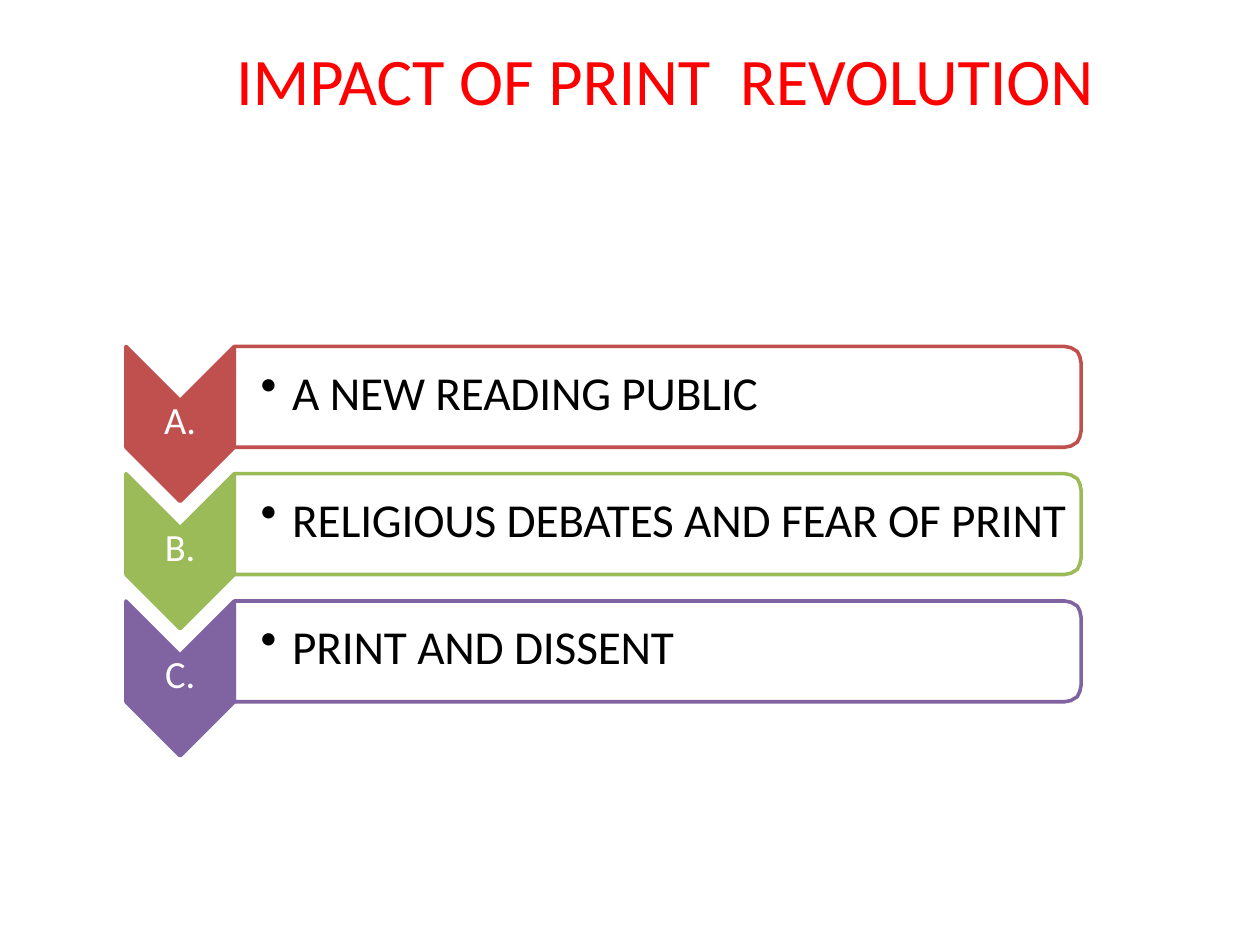
from lxml.etree import SubElement
from pptx import Presentation
from pptx.dml.color import RGBColor
from pptx.enum.text import MSO_ANCHOR, PP_ALIGN
from pptx.oxml.ns import qn
from pptx.util import Inches, Pt

COLORS = {
    "title": "FF0000",
    "text": "000000",
    "paper": "FFFFFF",
    "red": "C0504D",
    "green": "9BBA58",
    "purple": "8063A1",
}
IMPACTS = [
    ("A.", "A NEW READING PUBLIC", "red"),
    ("B.", "RELIGIOUS DEBATES AND FEAR OF PRINT", "green"),
    ("C.", "PRINT AND DISSENT", "purple"),
]
LEFT, SPINE, RIGHT = 1, 1.86, 8.58
FIRST_TOP, PITCH = 2.75, 1.01
ROW_HEIGHT, NOTCH = 0.8, 0.43


class ImpactSlide:
    """Draws the slide's elements in one shared style."""

    font = "Calibri"
    outline = Pt(2.04)

    def __init__(self, slide):
        self.slide = slide

    def color(self, name):
        return RGBColor.from_string(COLORS[name])

    def text(self, wording, box, size, color, align=PP_ALIGN.LEFT,
             anchor=MSO_ANCHOR.TOP, margin=0, indent=0, bullet=False, spacing=0):
        textbox = self.slide.shapes.add_textbox(*map(Inches, box))
        frame = textbox.text_frame
        frame.word_wrap = True
        frame.vertical_anchor = anchor
        frame.margin_left = frame.margin_right = frame.margin_bottom = 0
        frame.margin_top = Inches(0.01)
        frame.text = wording
        paragraph = frame.paragraphs[0]
        paragraph.alignment = align
        paragraph.space_before = Pt(1)
        properties = paragraph._p.get_or_add_pPr()
        properties.set("marL", str(Inches(margin)))
        properties.set("indent", str(Inches(indent)))
        if bullet:
            SubElement(properties, qn("a:buChar"), char="•")
        run = paragraph.runs[0]
        run.font.name = self.font
        run.font.size = Pt(size)
        run.font.color.rgb = self.color(color)
        run._r.get_or_add_rPr().set("spc", str(round(spacing * 100)))

    def outlined(self, points, fill, line):
        start, *rest = [(Inches(x), Inches(y)) for x, y in points]
        builder = self.slide.shapes.build_freeform(*start)
        builder.add_line_segments(rest, close=True)
        shape = builder.convert_to_shape()
        shape.shadow.inherit = False
        shape.fill.solid()
        shape.fill.fore_color.rgb = self.color(fill)
        shape.line.color.rgb = self.color(line)
        shape.line.width = self.outline
        return shape

    def chevron(self, top, color):
        middle, bottom = (LEFT + SPINE) / 2, top + ROW_HEIGHT
        self.outlined([
            (LEFT, top), (middle, top + NOTCH), (SPINE, top),
            (SPINE, bottom), (middle, bottom + NOTCH), (LEFT, bottom),
        ], color, color)

    def panel(self, top, color):
        bottom = top + ROW_HEIGHT
        corner = [(0.13, 0), (0.08, 0.01), (0.03, 0.04), (0.01, 0.08), (0, 0.13)]
        upper = [(RIGHT - x, top + y) for x, y in corner]
        lower = [(RIGHT - x, bottom - y) for x, y in reversed(corner)]
        panel = self.outlined(
            [(SPINE, top), *upper, *lower, (SPINE, bottom)], "paper", color)
        fill_color = panel._element.spPr.find(qn("a:solidFill"))[0]
        SubElement(fill_color, qn("a:alpha"), val="90000")

    def impact(self, top, letter, wording, color):
        self.chevron(top, color)
        self.text(letter, (LEFT, top + 0.38, SPINE - LEFT, 0.36), 22, "paper",
                  align=PP_ALIGN.CENTER)
        self.panel(top, color)
        self.text(wording, (2.06, top + 0.12, 6.5, 0.6), 27, "text",
                  margin=0.26, indent=-0.25, bullet=True, spacing=-0.1)


def main():
    presentation = Presentation()
    presentation.slide_width = Inches(10)
    presentation.slide_height = Inches(7.5)
    page = ImpactSlide(presentation.slides.add_slide(presentation.slide_layouts[6]))
    page.text("IMPACT OF PRINT  REVOLUTION", (0.5, 0.31, 9, 0.63), 38, "title",
              align=PP_ALIGN.CENTER, anchor=MSO_ANCHOR.MIDDLE,
              margin=1.1, indent=-0.55, spacing=-0.1)
    for row, (letter, wording, color) in enumerate(IMPACTS):
        page.impact(FIRST_TOP + row * PITCH, letter, wording, color)
    presentation.save("out.pptx")


if __name__ == "__main__":
    main()
